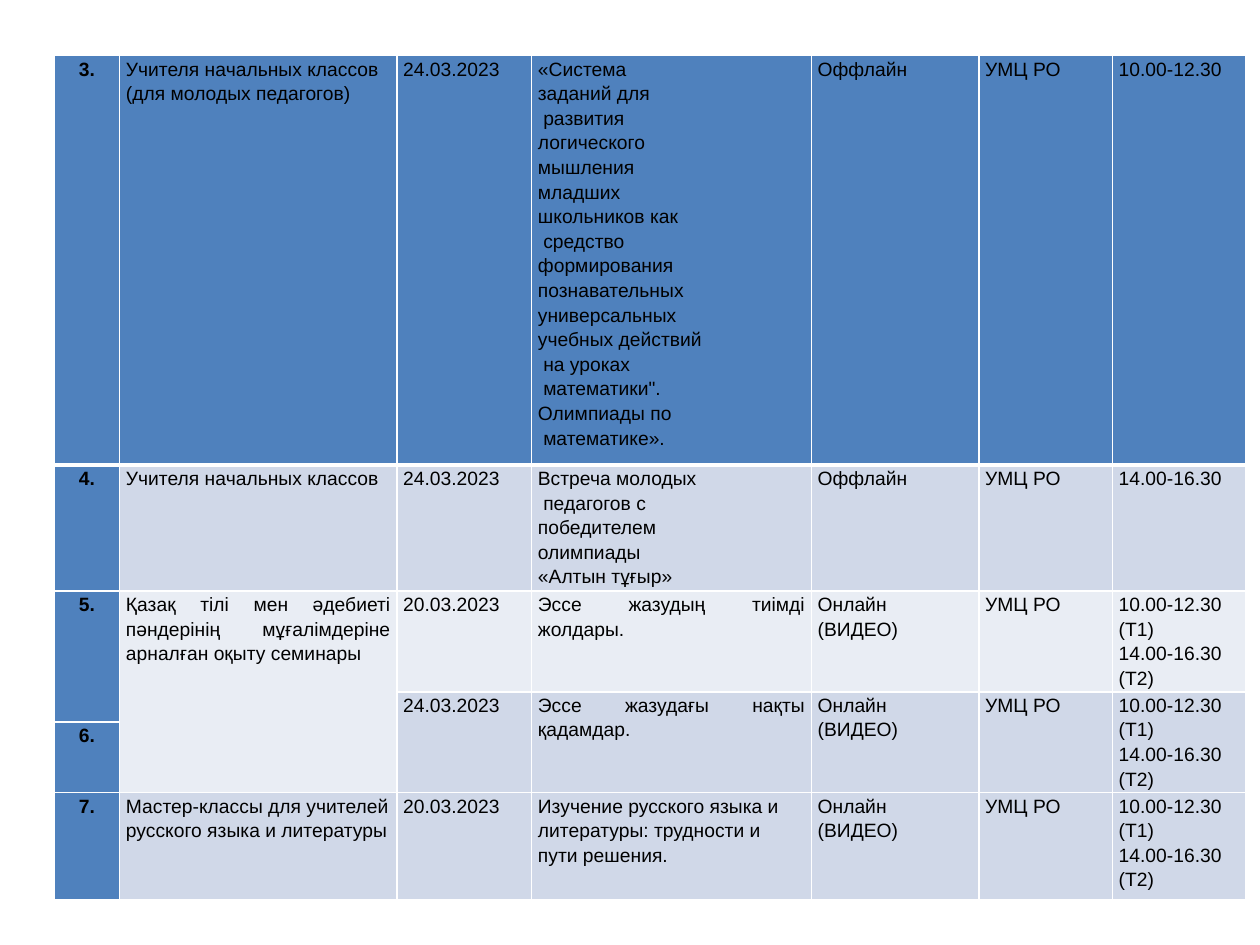
from lxml.etree import SubElement
from pptx import Presentation
from pptx.dml.color import RGBColor
from pptx.enum.text import PP_ALIGN
from pptx.oxml.ns import qn
from pptx.util import Inches, Pt

COLORS = {"blue": "4F81BD", "band": "D0D8E8", "pale": "E9EDF4", "line": "FFFFFF", "text": "000000"}
COLUMN_WIDTHS = [0.52, 2.2, 1.07, 2.22, 1.33, 1.06, 1.06]
ROW_HEIGHTS = [3.25, 1, 0.8, 0.24, 0.56, 0.85]
ROW_FILLS = ["blue", "band", "pale", "band", "band", "band"]
MERGES = [((2, 0), (3, 0)), ((2, 1), (4, 1))] + [((3, column), (4, column)) for column in range(2, 7)]
LEFT_ALIGNED = [(5, 1), (5, 3)]
ONLINE = "Онлайн (ВИДЕО)"
TWO_SESSIONS = "10.00-12.30 (Т1)\n14.00-16.30 (Т2)"
LOGIC_TOPIC = """«Система 
заданий для
 развития 
логического 
мышления 
младших 
школьников как
 средство 
формирования 
познавательных 
универсальных 
учебных действий
 на уроках
 математики". 
Олимпиады по
 математике»."""
MEETING_TOPIC = """Встреча молодых
 педагогов с 
победителем 
олимпиады 
«Алтын тұғыр»"""
SCHEDULE = [
    ["3.", "Учителя начальных классов\n(для молодых педагогов)", "24.03.2023", LOGIC_TOPIC,
     "Оффлайн", "УМЦ РО", "10.00-12.30"],
    ["4.", "Учителя начальных классов", "24.03.2023", MEETING_TOPIC,
     "Оффлайн", "УМЦ РО", "14.00-16.30"],
    ["5.", "Қазақ тілі мен әдебиеті пәндерінің мұғалімдеріне арналған оқыту семинары", "20.03.2023",
     "Эссе жазудың тиімді жолдары.", ONLINE, "УМЦ РО", TWO_SESSIONS],
    ["", "", "24.03.2023", "Эссе жазудағы нақты қадамдар.", ONLINE, "УМЦ РО", TWO_SESSIONS],
    ["6.", "", "", "", "", "", ""],
    ["7.", "Мастер-классы для учителей русского языка и литературы", "20.03.2023",
     "Изучение русского языка и литературы: трудности и пути решения.",
     ONLINE, "УМЦ РО", "10.00-12.30\n(Т1)\n14.00-16.30\n(Т2)"],
]


def add_borders(cell, widths):
    properties = cell._tc.get_or_add_tcPr()
    for side, width in widths.items():
        line = SubElement(properties, qn(f"a:{side}"), w=str(Pt(width)))
        fill = SubElement(line, qn("a:solidFill"))
        SubElement(fill, qn("a:srgbClr"), val=COLORS["line"])


def write_cell(cell, text, alignment, bold):
    for index, line in enumerate(text.split("\n")):
        frame = cell.text_frame
        paragraph = frame.add_paragraph() if index else frame.paragraphs[0]
        paragraph.alignment = alignment
        paragraph.line_spacing = 1.15
        paragraph.font.size = Pt(11)
        if line:
            run = paragraph.add_run()
            run.text = line
            run.font.name = "Arial"
            run.font.size = Pt(11)
            run.font.bold = bold
            run.font.color.rgb = RGBColor.from_string(COLORS["text"])


presentation = Presentation()
presentation.slide_width = Inches(10)
presentation.slide_height = Inches(7.5)
slide = presentation.slides.add_slide(presentation.slide_layouts[6])

shape = slide.shapes.add_table(
    len(ROW_HEIGHTS), len(COLUMN_WIDTHS), Inches(0.43), Inches(0.44),
    Inches(sum(COLUMN_WIDTHS)), Inches(sum(ROW_HEIGHTS)))
table = shape.table
for column, width in zip(table.columns, COLUMN_WIDTHS):
    column.width = Inches(width)
for row, height in zip(table.rows, ROW_HEIGHTS):
    row.height = Inches(height)

for row_index, texts in enumerate(SCHEDULE):
    for column_index, text in enumerate(texts):
        cell = table.cell(row_index, column_index)
        cell.margin_left = cell.margin_right = Inches(0.05)
        cell.margin_top = cell.margin_bottom = 0
        is_number = column_index == 0
        alignment = PP_ALIGN.CENTER if is_number else PP_ALIGN.JUSTIFY
        if (row_index, column_index) in LEFT_ALIGNED:
            alignment = PP_ALIGN.LEFT
        write_cell(cell, text, alignment, is_number)
        top = 3 if row_index == 1 else 1
        bottom = 3 if row_index == 0 else 1
        add_borders(cell, {"lnL": 1, "lnR": 1, "lnT": top, "lnB": bottom})
        cell.fill.solid()
        fill_name = "blue" if is_number else ROW_FILLS[row_index]
        cell.fill.fore_color.rgb = RGBColor.from_string(COLORS[fill_name])

for first, last in MERGES:
    table.cell(*first).merge(table.cell(*last))

for cell in (table.cell(2, 1), table.cell(4, 1)):
    cell.fill.fore_color.rgb = RGBColor.from_string(COLORS["pale"])

presentation.save("out.pptx")
